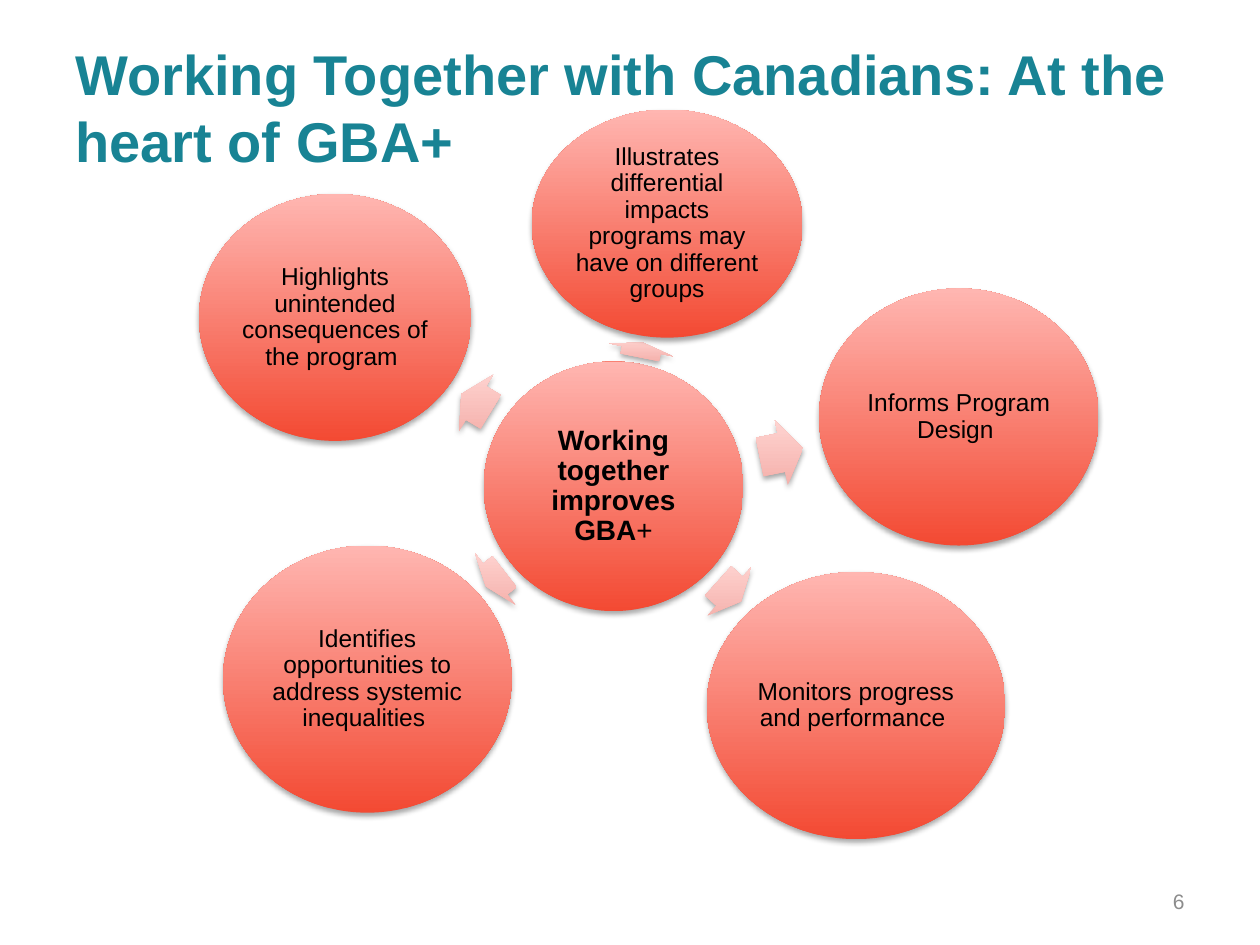
from math import atan2, cos, degrees, hypot, sin

from lxml import etree
from pptx import Presentation
from pptx.dml.color import RGBColor
from pptx.enum.shapes import MSO_SHAPE
from pptx.enum.text import MSO_ANCHOR, PP_ALIGN
from pptx.oxml.ns import qn
from pptx.util import Pt

ELLIPSE, ARROW = MSO_SHAPE.OVAL, MSO_SHAPE.RIGHT_ARROW
LEFT, CENTER, RIGHT = PP_ALIGN.LEFT, PP_ALIGN.CENTER, PP_ALIGN.RIGHT
TOP, MIDDLE = MSO_ANCHOR.TOP, MSO_ANCHOR.MIDDLE

COLORS = {
    "title": "188394",
    "text": "000000",
    "number": "8C8C8C",
    "circle_bottom": "F34A33",
    "circle_top": "FFB6B1",
    "arrow_bottom": "F4AEA9",
    "arrow_top": "FFD6D3",
    "shadow": "000000",
}
FONT = "Arial"
TITLE = "Working Together with Canadians: At the heart of GBA+"
PAGE = "6"

# centre x, centre y, width, height
HUB = (350.6, 277.9, 148.3, 142.6)
HUB_RUNS = [("Working together improves GBA", True), ("+", False)]
BENEFITS = [
    ("Illustrates differential impacts programs may have on different groups",
     (381.2, 127.8, 154.8, 130.3)),
    ("Informs Program Design ", (547.9, 238.3, 159.8, 146.9)),
    ("Monitors progress and performance ", (489.2, 403.2, 170.6, 152.6)),
    ("Identifies opportunities to address systemic inequalities ",
     (209.9, 388.1, 164.9, 152.6)),
    ("Highlights unintended consequences of the program ",
     (191.5, 181.4, 155.5, 141.1)),
]
ARROW_HEIGHT = 37.4
ARROW_SHARE = 0.53


def rgb(name):
    return RGBColor.from_string(COLORS[name])


def write(s, runs, size, color, align, anchor, insets):
    tf = s.text_frame
    tf.word_wrap = True
    tf.vertical_anchor = anchor
    tf.margin_left, tf.margin_top, tf.margin_right, tf.margin_bottom = map(Pt, insets)
    p = tf.paragraphs[0]
    p.alignment = align
    for text, bold in runs:
        r = p.add_run()
        r.text = text
        r.font.name, r.font.size, r.font.bold = FONT, Pt(size), bold
        r.font.color.rgb = rgb(color)
    return p


def add_text(box, *args):
    write(slide.shapes.add_textbox(*map(Pt, box)), *args)


def add_glossy(kind, cx, cy, w, h, style):
    s = slide.shapes.add_shape(kind, Pt(cx - w / 2), Pt(cy - h / 2), Pt(w), Pt(h))
    s.fill.gradient()
    s.fill.gradient_angle = 90
    for stop, end in zip(s.fill.gradient_stops, ("bottom", "top")):
        stop.color.rgb = rgb(f"{style}_{end}")
    sp_pr = s.element.spPr
    sp_pr.find(qn("a:gradFill")).set("rotWithShape", "0")
    s.line.fill.background()
    s.shadow.inherit = False
    shadow = etree.SubElement(
        sp_pr.find(qn("a:effectLst")), qn("a:outerShdw"),
        blurRad=str(Pt(3.1)), dist=str(Pt(1.8)), dir="5400000", rotWithShape="0")
    color = etree.SubElement(shadow, qn("a:srgbClr"), val=COLORS["shadow"])
    etree.SubElement(color, qn("a:alpha"), val="35000")
    return s


def add_circle(place, runs, size):
    s = add_glossy(ELLIPSE, *place, "circle")
    p = write(s, runs, size, "text", CENTER, MIDDLE, (1.5,) * 4)
    p.line_spacing = 0.9


def radius(place, angle):
    a, b = place[2] / 2, place[3] / 2
    return a * b / hypot(b * cos(angle), a * sin(angle))


def add_arrow(start, end):
    dx, dy = end[0] - start[0], end[1] - start[1]
    angle = atan2(dy, dx)
    inner = radius(start, angle)
    gap = hypot(dx, dy) - inner - radius(end, angle)
    middle = inner + gap / 2
    s = add_glossy(ARROW, start[0] + middle * cos(angle), start[1] + middle * sin(angle),
                   gap * ARROW_SHARE, ARROW_HEIGHT, "arrow")
    s.adjustments[0], s.adjustments[1] = 0.6, 0.5
    s.rotation = degrees(angle) % 360


prs = Presentation()
prs.slide_width, prs.slide_height = Pt(720), Pt(540)
slide = prs.slides.add_slide(prs.slide_layouts[6])

add_text((516, 500.5, 168, 28.75), [(PAGE, False)], 12, "number", RIGHT, MIDDLE,
         (7.2, 3.6, 7.2, 3.6))
add_text((36, 22.5, 664, 75), [(TITLE, True)], 32, "title", LEFT, TOP, (7.2, 0, 7.2, 0))
add_circle(HUB, HUB_RUNS, 16)
for text, place in BENEFITS:
    add_arrow(HUB, place)
    add_circle(place, [(text, False)], 14)

prs.save("out.pptx")
